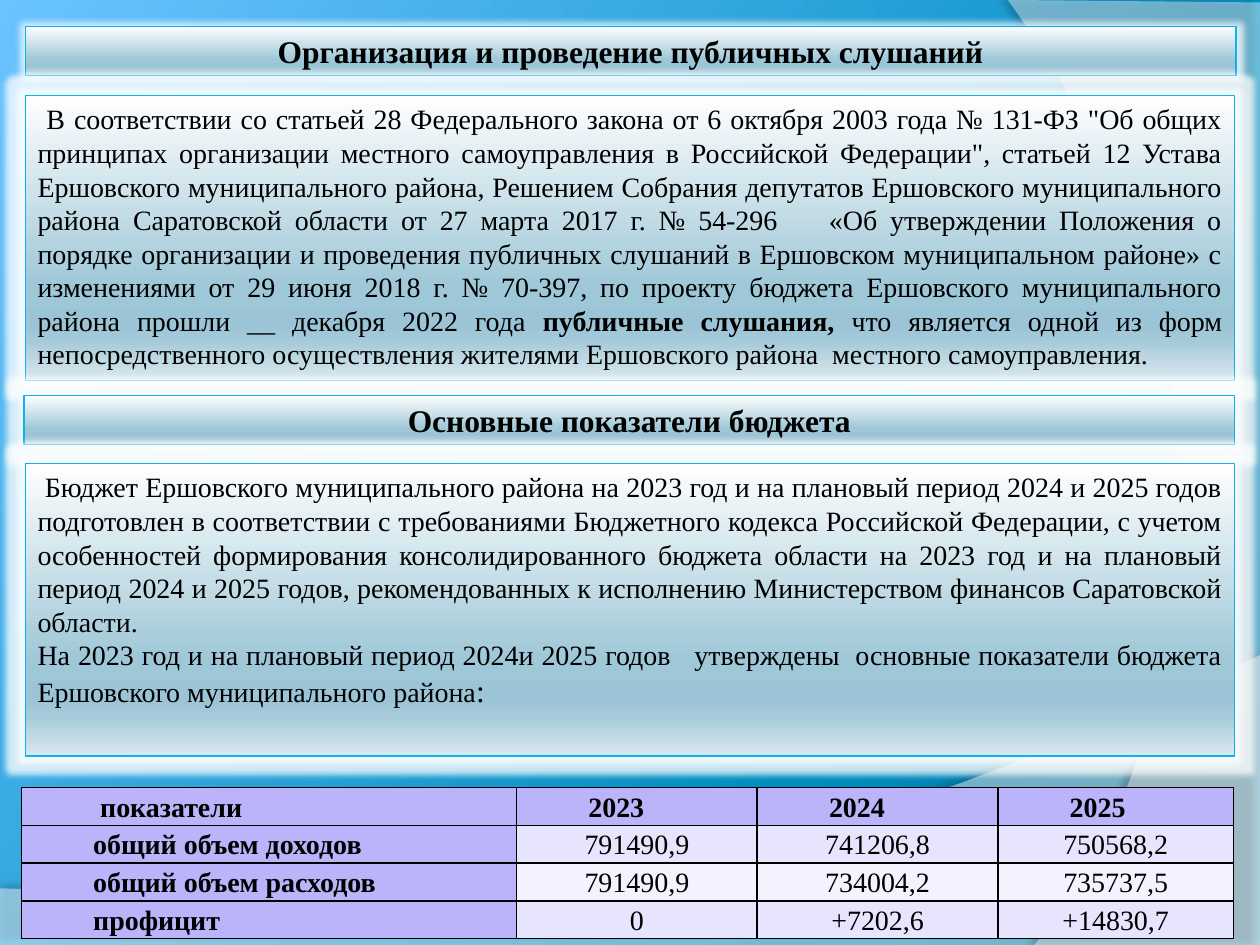
from lxml.etree import SubElement
from pptx import Presentation
from pptx.dml.color import RGBColor
from pptx.enum.shapes import MSO_SHAPE as Shape
from pptx.enum.text import MSO_ANCHOR as Anchor, MSO_AUTO_SIZE as AutoSize, PP_ALIGN as Align
from pptx.oxml.ns import qn
from pptx.util import Inches, Pt

FONT = "Times New Roman"
PANEL_STOPS = [(0, "FEFEFF"), (68, "9EC7D7"), (81, "9BC5D6"), (86, "A5CAD9"), (100, "DAE8EE")]
SKY_STOPS = [(0, "0076A1"), (30, "008DC0"), (100, "6AC3FF")]

HEARINGS = [[
    (' В соответствии со статьей 28 Федерального закона от 6 октября 2003 года № 131-ФЗ "Об общих '
     'принципах организации местного самоуправления в Российской Федерации", статьей 12 Устава '
     'Ершовского муниципального района, Решением Собрания депутатов Ершовского муниципального '
     'района Саратовской области от 27 марта 2017 г. № 54-296    «Об утверждении Положения о '
     'порядке организации и проведения публичных слушаний в Ершовском муниципальном районе» с '
     'изменениями от 29 июня 2018 г. № 70-397, по проекту бюджета Ершовского муниципального '
     'района прошли __ декабря 2022 года ', 16, False),
    ("публичные слушания, ", 16, True),
    ("что является одной из форм непосредственного осуществления жителями Ершовского района  "
     "местного самоуправления.", 16, False),
]]
BUDGET = [
    [(" Бюджет Ершовского муниципального района на 2023 год и на плановый период 2024 и 2025 годов "
      "подготовлен в соответствии с требованиями Бюджетного кодекса Российской Федерации, с учетом "
      "особенностей формирования консолидированного бюджета области на 2023 год и на плановый "
      "период 2024 и 2025 годов, рекомендованных к исполнению Министерством финансов Саратовской "
      "области.", 16, False)],
    [("На 2023 год и на плановый период 2024и 2025 годов   утверждены  основные показатели бюджета "
      "Ершовского муниципального района", 16, False), (":", 18, False)],
]
INDICATORS = [
    [" показатели", "2023", "2024", "2025"],
    ["общий объем доходов", "791490,9", "741206,8", "750568,2"],
    ["общий объем расходов", "791490,9", "734004,2", "735737,5"],
    ["профицит", "0", "+7202,6", "+14830,7"],
]


def rgb(color):
    return RGBColor.from_string(color)


def add_color(parent, color, alpha=100):
    tint = SubElement(parent, qn("a:srgbClr"), val=color)
    if alpha < 100:
        SubElement(tint, qn("a:alpha"), val=str(alpha * 1000))


def set_gradient(fill, owner, stops, angle):
    fill.gradient()
    fill.gradient_angle = angle
    stop_list = owner.find(".//" + qn("a:gsLst"))
    stop_list.clear()
    for position, color in stops:
        add_color(SubElement(stop_list, qn("a:gs"), pos=str(position * 1000)), color)


def add_effect(shape, kind, color, alpha, **settings):
    shape.shadow.inherit = False
    effects = shape._element.spPr.find(qn("a:effectLst"))
    values = {name: str(int(value)) for name, value in settings.items()}
    add_color(SubElement(effects, qn("a:" + kind), **values), color, alpha)


def add_run(paragraph, text, size, bold):
    run = paragraph.add_run()
    run.text = text
    run.font.name, run.font.size, run.font.bold = FONT, Pt(size), bold
    run.font.color.rgb = rgb("000000")


def curve(start, first, second, end, steps=40):
    for step in range(steps + 1):
        t = step / steps
        u = 1 - t
        yield tuple(u**3 * a + 3 * u * u * t * b + 3 * u * t * t * c + t**3 * d
                    for a, b, c, d in zip(start, first, second, end))


def add_wave(slide, points, alpha, shadow_alpha, distance, direction):
    start, *others = [(Inches(x), Inches(y)) for x, y in points]
    builder = slide.shapes.build_freeform(*start)
    builder.add_line_segments(others, close=True)
    wave = builder.convert_to_shape()
    wave.fill.solid()
    wave.fill.fore_color.rgb = rgb("FFFFFF")
    tint = wave._element.spPr.find(".//" + qn("a:srgbClr"))
    SubElement(tint, qn("a:alpha"), val=str(alpha * 1000))
    wave.line.fill.background()
    add_effect(wave, "outerShdw", "000000", shadow_alpha,
               blurRad=Pt(4), dist=Pt(distance), dir=direction * 60000)


def add_backdrop(slide):
    set_gradient(slide.background.fill, slide.element, SKY_STOPS, 143)
    bottom = [(0, 7.5), (10, 7.5), *curve((10, 5.2), (5.59, 7.29), (3.91, 7.19), (0, 7.05))]
    side = [(10, 0.02), (10, 7.5), *curve((8.21, 7.5), (9.35, 6.19), (10.18, 3), (8, 0))]
    add_wave(slide, bottom, 45, 35, 3.5, 270)
    add_wave(slide, side, 40, 45, 4, 180)


def style_panel(panel, box):
    panel.left, panel.top, panel.width, panel.height = map(Inches, box)
    set_gradient(panel.fill, panel._element, PANEL_STOPS, 270)
    panel.line.color.rgb = rgb("0AB3EC")
    panel.line.width = Pt(0.75)
    add_effect(panel, "glow", "FFFFFF", 75, rad=Inches(0.1))
    panel.text_frame.word_wrap = True
    panel.text_frame.auto_size = AutoSize.NONE


def add_panel(slide, box):
    panel = slide.shapes.add_shape(Shape.RECTANGLE, *map(Inches, box))
    style_panel(panel, box)
    return panel


def fill_heading(panel, text):
    frame = panel.text_frame
    frame.vertical_anchor = Anchor.MIDDLE
    frame.margin_left = frame.margin_right = frame.margin_top = frame.margin_bottom = Inches(0.05)
    frame.paragraphs[0].alignment = Align.CENTER
    add_run(frame.paragraphs[0], text, 18, True)


def add_title(slide, box, text):
    title = slide.shapes.title
    slide.shapes._spTree.append(title._element)
    style_panel(title, box)
    fill_heading(title, text)


def add_body(slide, box, paragraphs):
    frame = add_panel(slide, box).text_frame
    frame.vertical_anchor = Anchor.TOP
    for index, runs in enumerate(paragraphs):
        paragraph = frame.add_paragraph() if index else frame.paragraphs[0]
        paragraph.alignment = Align.JUSTIFY
        for run in runs:
            add_run(paragraph, *run)


def format_cell(cell, text, color, is_label):
    properties = cell._tc.get_or_add_tcPr()
    for side in ("lnL", "lnR", "lnT", "lnB"):
        border = SubElement(properties, qn("a:" + side), w=str(Pt(1)))
        add_color(SubElement(border, qn("a:solidFill")), "000000")
    cell.fill.solid()
    cell.fill.fore_color.rgb = rgb(color)
    cell.margin_left = cell.margin_right = Inches(0.07)
    cell.margin_top = cell.margin_bottom = 0
    paragraph = cell.text_frame.paragraphs[0]
    paragraph.line_spacing = 1.15
    paragraph.alignment = Align.JUSTIFY if is_label else Align.CENTER
    if is_label:
        paragraph._p.get_or_add_pPr().set("marL", str(Inches(0.5)))
    add_run(paragraph, text, 16, is_label)


def add_indicators(slide, box):
    table = slide.shapes.add_table(len(INDICATORS), 4, *map(Inches, box)).table
    for column, width in zip(table.columns, (3.93, 1.91, 1.91, 1.87)):
        column.width = Inches(width)
    for row, values in enumerate(INDICATORS):
        table.rows[row].height = Inches(box[3] / len(INDICATORS))
        for column, value in enumerate(values):
            is_label = row == 0 or column == 0
            band = "E7E5FD" if row % 2 else "F3F2FE"
            format_cell(table.cell(row, column), value, "BBB4FB" if is_label else band, is_label)


def main():
    deck = Presentation()
    deck.slide_width, deck.slide_height = Inches(10), Inches(7.5)
    slide = deck.slides.add_slide(deck.slide_layouts[5])
    add_backdrop(slide)
    add_title(slide, (0.2, 0.21, 9.61, 0.39), "Организация и проведение публичных слушаний")
    add_body(slide, (0.2, 0.76, 9.6, 2.26), HEARINGS)
    fill_heading(add_panel(slide, (0.19, 3.14, 9.61, 0.39)), "Основные показатели бюджета")
    add_body(slide, (0.2, 3.68, 9.6, 2.32), BUDGET)
    add_indicators(slide, (0.17, 6.25, 9.62, 1.2))
    deck.save("out.pptx")


if __name__ == "__main__":
    main()
